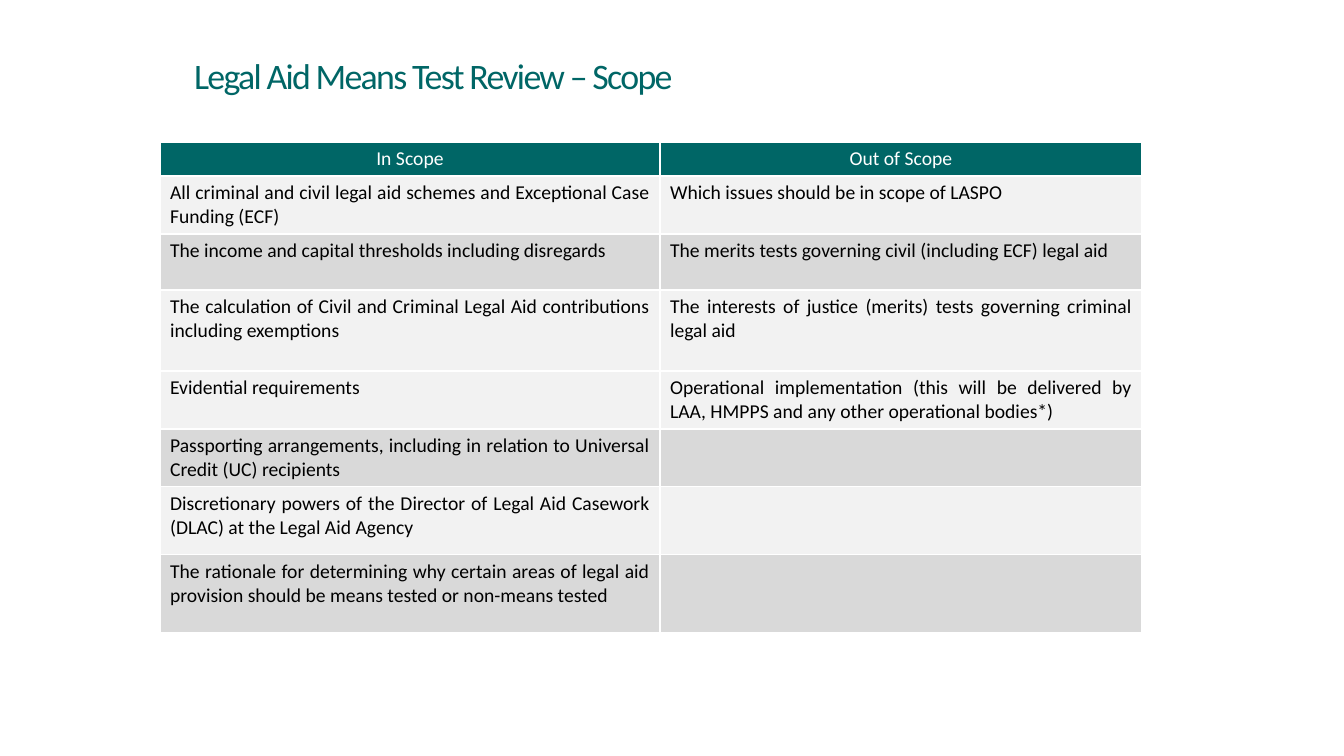
from dataclasses import dataclass

from pptx import Presentation
from pptx.dml.color import RGBColor
from pptx.enum.text import MSO_ANCHOR, MSO_AUTO_SIZE, PP_ALIGN
from pptx.util import Pt

EMU_PER_PX = 914400 / 100.8


@dataclass(frozen=True)
class Theme:
    font: str = "Calibri"
    teal: str = "006666"
    white: str = "FFFFFF"
    black: str = "000000"
    light: str = "F2F2F2"
    grey: str = "D9D9D9"
    title_size: float = 25.6
    title_tracking: int = -120
    table_size: float = 14


THEME = Theme()

COLUMN_WIDTHS = (500, 482)
HEADINGS = ("In Scope", "Out of Scope")
# Row height, fill, in scope, out of scope
SCOPE_ROWS = (
    (58, THEME.light,
     "All criminal and civil legal aid schemes and Exceptional Case Funding (ECF)",
     "Which issues should be in scope of LASPO"),
    (56, THEME.grey,
     "The income and capital thresholds including disregards",
     "The merits tests governing civil (including ECF) legal aid"),
    (81, THEME.light,
     "The calculation of Civil and Criminal Legal Aid contributions including exemptions",
     "The interests of justice (merits) tests governing criminal legal aid"),
    (58, THEME.light,
     "Evidential requirements",
     "Operational implementation (this will be delivered by LAA, HMPPS "
     "and any other operational bodies*)"),
    (58, THEME.grey,
     "Passporting arrangements, including in relation to Universal Credit (UC) recipients",
     ""),
    (68, THEME.light,
     "Discretionary powers of the Director of Legal Aid Casework (DLAC) "
     "at the Legal Aid Agency",
     ""),
    (78, THEME.grey,
     "The rationale for determining why certain areas of legal aid provision "
     "should be means tested or non-means tested",
     ""),
)
HEADER_HEIGHT = 34


def px(length):
    return round(length * EMU_PER_PX)


def add_run(paragraph, text, size, color):
    run = paragraph.add_run()
    run.text = text
    run.font.name = THEME.font
    run.font.size = Pt(size)
    run.font.bold = False
    run.font.color.rgb = RGBColor.from_string(color)
    return run


def set_title(slide, text, left, top, width, height):
    title = slide.shapes.title
    title.left, title.top = px(left), px(top)
    title.width, title.height = px(width), px(height)
    frame = title.text_frame
    frame.word_wrap = True
    frame.auto_size = MSO_AUTO_SIZE.NONE
    frame.vertical_anchor = MSO_ANCHOR.MIDDLE
    heading = frame.paragraphs[0]
    heading.alignment = PP_ALIGN.LEFT
    heading.line_spacing = 0.65
    run = add_run(heading, text, THEME.title_size, THEME.teal)
    run.font._element.set("spc", str(THEME.title_tracking))


def fill_cell(cell, text, fill, color, alignment):
    cell.fill.solid()
    cell.fill.fore_color.rgb = RGBColor.from_string(fill)
    paragraph = cell.text_frame.paragraphs[0]
    paragraph.alignment = alignment
    if text:
        add_run(paragraph, text, THEME.table_size, color)
    else:
        paragraph.font.size = Pt(THEME.table_size)


def add_scope_table(slide, left, top):
    heights = [HEADER_HEIGHT] + [row[0] for row in SCOPE_ROWS]
    table = slide.shapes.add_table(
        len(heights), len(COLUMN_WIDTHS), px(left), px(top),
        px(sum(COLUMN_WIDTHS)), px(sum(heights))).table
    for column, width in zip(table.columns, COLUMN_WIDTHS):
        column.width = px(width)
    for row, height in zip(table.rows, heights):
        row.height = px(height)

    for cell, heading in zip(table.rows[0].cells, HEADINGS):
        fill_cell(cell, heading, THEME.teal, THEME.white, PP_ALIGN.CENTER)
    for index, (_, fill, *issues) in enumerate(SCOPE_ROWS, start=1):
        for cell, issue in zip(table.rows[index].cells, issues):
            fill_cell(cell, issue, fill, THEME.black, PP_ALIGN.JUSTIFY)


def main():
    deck = Presentation()
    deck.slide_width, deck.slide_height = px(1344), px(756)
    title_only = deck.slide_layouts[5]
    slide = deck.slides.add_slide(title_only)
    set_title(slide, "Legal Aid Means Test Review – Scope", 184, 62, 853, 39)
    add_scope_table(slide, 160, 142)
    deck.save("out.pptx")


if __name__ == "__main__":
    main()
